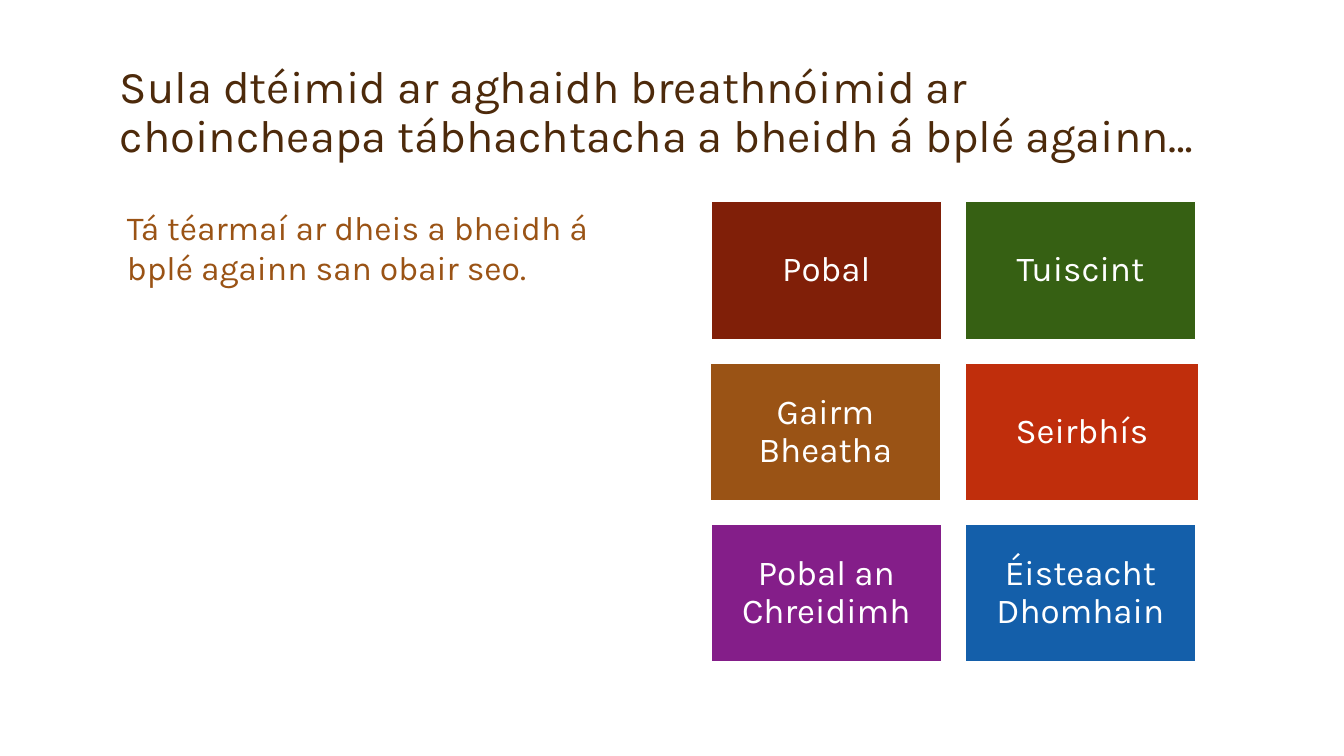
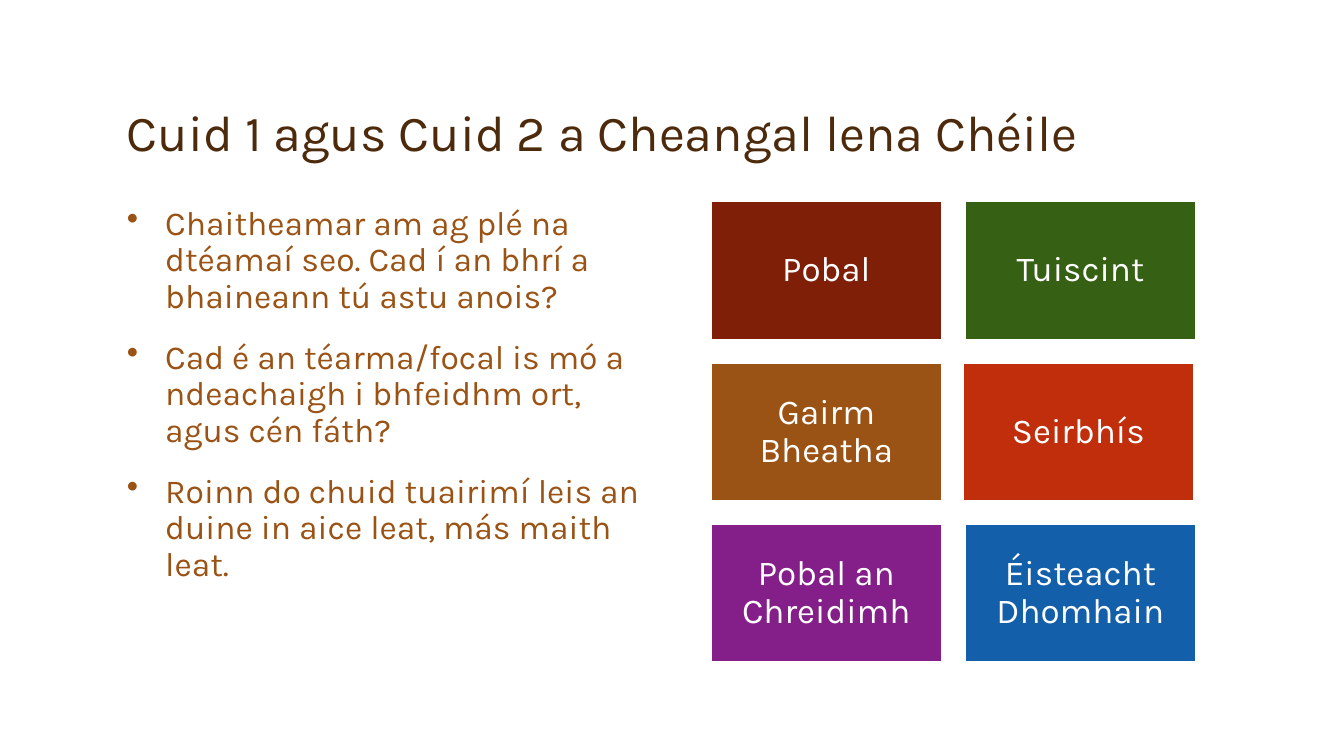
import pptx
import pptx.util
import pptx.dml.color
import pptx.enum.shapes
import pptx.enum.text
import pptx.oxml.ns
import lxml.etree

Inches, Pt = pptx.util.Inches, pptx.util.Pt
ALIGN = pptx.enum.text.PP_ALIGN
ANCHOR = pptx.enum.text.MSO_ANCHOR

# Shared look
TITLE_COLOUR, BODY_COLOUR, WHITE = "4D2A0B", "9A5315", "FFFFFF"
TILE_WIDTH, TILE_HEIGHT = 2.29, 1.37
TILE_LEFT, TILE_TOP = 7.05, 2
COLUMN_STEP, ROW_STEP = 2.52, 1.6
TERMS = [
    ("Pobal", "801F08"),
    ("Tuiscint", "366013"),
    ("Gairm Bheatha", "9A5315"),
    ("Seirbhís", "C02E0C"),
    ("Pobal an Chreidimh", "841E89"),
    ("Éisteacht Dhomhain", "145FAA"),
]

# Content; "nudges" gives a tile's shift in left edge and in width
SLIDES = [
    {
        "title": "Sula dtéimid ar aghaidh breathnóimid ar choincheapa "
                 "tábhachtacha a bheidh á bplé againn…",
        "title_box": (1.09, 0.08, 11.07, 1.58),
        "title_size": 32.4,
        "body": ["Tá téarmaí ar dheis a bheidh á bplé againn san obair seo."],
        "bulleted": False,
        "nudges": {"Gairm Bheatha": (-0.01, 0), "Seirbhís": (0, 0.03)},
    },
    {
        "title": "Cuid 1 agus Cuid 2 a Cheangal lena Chéile",
        "title_box": (1.16, 0.33, 11, 1.33),
        "title_size": 36,
        "body": [
            "Chaitheamar am ag plé na dtéamaí seo. Cad í an bhrí a bhaineann tú astu anois?",
            "Cad é an téarma/focal is mó a ndeachaigh i bhfeidhm ort, agus cén fáth?",
            "Roinn do chuid tuairimí leis an duine in aice leat, más maith leat.",
        ],
        "bulleted": True,
        "nudges": {"Seirbhís": (-0.02, 0)},
    },
]


def colour(hex_code):
    return pptx.dml.color.RGBColor.from_string(hex_code)


def write(shape, paragraphs, size, hex_code, frame_format, line_spacing=0.9,
          align=ALIGN.LEFT, bulleted=False):
    frame = shape.text_frame
    for name, value in {"word_wrap": True, **frame_format}.items():
        setattr(frame, name, value)
    for index, text in enumerate(paragraphs):
        paragraph = frame.paragraphs[0] if index == 0 else frame.add_paragraph()
        paragraph.text = text
        paragraph.alignment = align
        paragraph.line_spacing = line_spacing
        paragraph.space_before = Pt(18 if index else 0)
        if bulleted:
            properties = paragraph._p.get_or_add_pPr()
            properties.set("marL", str(Inches(0.38)))
            properties.set("indent", str(Inches(-0.38)))
            bullet = lxml.etree.SubElement(properties, pptx.oxml.ns.qn("a:buChar"))
            bullet.set("char", "•")
        for name, value in {"name": "Karla", "size": Pt(size)}.items():
            setattr(paragraph.font, name, value)
        paragraph.font.color.rgb = colour(hex_code)


deck = pptx.Presentation()
deck.slide_width, deck.slide_height = Inches(13.33), Inches(7.5)

for content in SLIDES:
    slide = deck.slides.add_slide(deck.slide_layouts[6])

    # Title
    title = slide.shapes.add_textbox(*map(Inches, content["title_box"]))
    write(title, [content["title"]], content["title_size"], TITLE_COLOUR,
          {"vertical_anchor": ANCHOR.BOTTOM})

    # Text on the left
    body = slide.shapes.add_textbox(Inches(1.16), Inches(2), Inches(5.42), Inches(4.58))
    write(body, content["body"], 24, BODY_COLOUR, {"vertical_anchor": ANCHOR.TOP},
          line_spacing=0.9 if content["bulleted"] else 1.0,
          bulleted=content["bulleted"])

    # Grid of terms, two to a row
    for index, (term, fill) in enumerate(TERMS):
        row, column = divmod(index, 2)
        shift, widening = content["nudges"].get(term, (0, 0))
        tile = slide.shapes.add_shape(
            pptx.enum.shapes.MSO_SHAPE.RECTANGLE,
            Inches(TILE_LEFT + column * COLUMN_STEP + shift),
            Inches(TILE_TOP + row * ROW_STEP),
            Inches(TILE_WIDTH + widening), Inches(TILE_HEIGHT))
        tile.shadow.inherit = False
        tile.fill.solid()
        tile.fill.fore_color.rgb = colour(fill)
        tile.line.color.rgb = colour(WHITE)
        tile.line.width = Pt(1)
        margins = {f"margin_{side}": Inches(0.1)
                   for side in ("left", "top", "right", "bottom")}
        write(tile, [term], 25, WHITE, {"vertical_anchor": ANCHOR.MIDDLE, **margins},
              align=ALIGN.CENTER)

deck.save("out.pptx")
